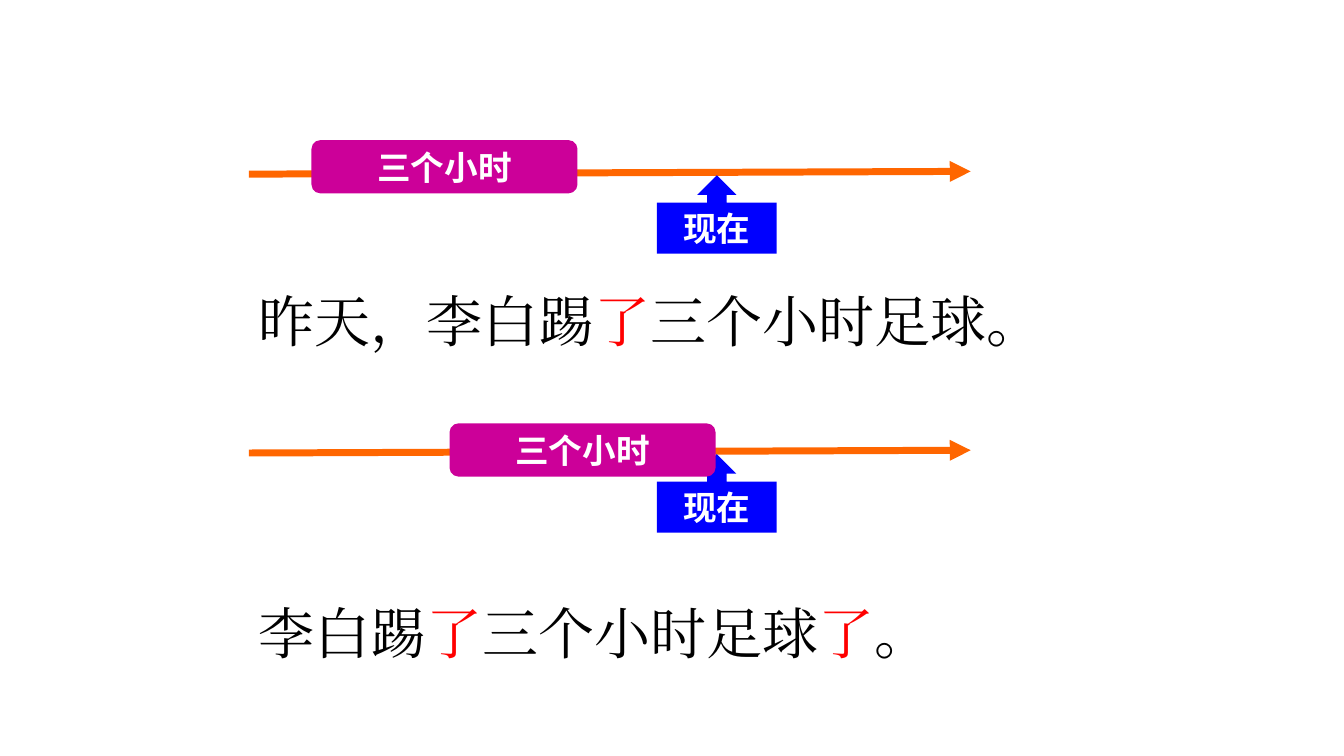
import pptx
import pptx.util
import pptx.dml.color
import pptx.enum.shapes
import pptx.enum.text
import pptx.oxml.ns
from lxml import etree

Pt = pptx.util.Pt
SHAPES = pptx.enum.shapes.MSO_SHAPE
COLOURS = {
    "text": "000000",
    "particle": "FF0000",
    "axis": "FF6600",
    "now": "0000FF",
    "duration": "CC0099",
    "label": "FFFFFF",
}
LABEL_FONT = "Noto Sans CJK SC"
SENTENCE_FONT = "Times New Roman"
PARTICLE = "了"


def rgb(name):
    """Return the named colour."""
    return pptx.dml.color.RGBColor.from_string(COLOURS[name])


def add_child(parent, tag, **attributes):
    """Append a drawing element with the given attributes."""
    return etree.SubElement(parent, pptx.oxml.ns.qn(tag), attributes)


def add_text(paragraph, text, size=24, font=LABEL_FONT, colour="label", bold=False):
    """Add a formatted run to a paragraph."""
    run = paragraph.add_run()
    run.text = text
    run.font.size = Pt(size)
    run.font.bold = bold
    run.font.color.rgb = rgb(colour)
    run.font.name = font
    add_child(run.font._element, "a:ea", typeface=font)


def add_label(slide, kind, box, text, colour):
    """Add a filled shape with a bold centred label."""
    shape = slide.shapes.add_shape(kind, *map(Pt, box))
    shape.shadow.inherit = False
    shape.fill.solid()
    shape.fill.fore_color.rgb = rgb(colour)
    shape.line.fill.background()
    frame = shape.text_frame
    frame.vertical_anchor = pptx.enum.text.MSO_ANCHOR.MIDDLE
    paragraph = frame.paragraphs[0]
    paragraph.alignment = pptx.enum.text.PP_ALIGN.CENTER
    add_text(paragraph, text, bold=True)


def add_timeline(slide, left, top, width, duration_left, duration_top):
    """Draw a time arrow with its present marker and its duration block."""
    axis = slide.shapes.add_connector(
        pptx.enum.shapes.MSO_CONNECTOR.STRAIGHT,
        Pt(left), Pt(top + 2), Pt(left + width), Pt(top))
    axis.line.width = Pt(5)
    axis.line.color.rgb = rgb("axis")
    add_child(axis.line._get_or_add_ln(), "a:tailEnd", type="triangle")
    add_child(axis._element.spPr, "a:effectLst")
    add_label(slide, SHAPES.UP_ARROW_CALLOUT,
              (left + 291.5, top + 2.8, 85.5, 56), "现在", "now")
    add_label(slide, SHAPES.ROUNDED_RECTANGLE,
              (left + duration_left, top + duration_top, 190, 38), "三个小时", "duration")


def add_sentence(slide, left, top, width, height, parts):
    """Write a sentence with its particles highlighted."""
    frame = slide.shapes.add_textbox(*map(Pt, (left, top, width, height))).text_frame
    frame.word_wrap = True
    paragraph = frame.paragraphs[0]
    paragraph.line_spacing = 2.0
    for part in parts:
        colour = "particle" if part == PARTICLE else "text"
        add_text(paragraph, part, size=40, font=SENTENCE_FONT, colour=colour)


def main():
    """Build and save the presentation."""
    presentation = pptx.Presentation()
    presentation.slide_width = Pt(960)
    presentation.slide_height = Pt(540)
    slide = presentation.slides.add_slide(presentation.slide_layouts[6])
    left = 177.8
    add_sentence(slide, left, 153.4, 684, 89,
                 ["昨天，李白踢", PARTICLE, "三个小时足球。"])
    add_sentence(slide, left, 375.8, 684, 104,
                 ["李白踢", PARTICLE, "三个小时足球", PARTICLE, "。"])
    add_timeline(slide, left, 122.4, 515.6, 44.7, -22.3)
    add_timeline(slide, left, 321.6, 515.6, 143.3, -19.2)
    presentation.save("out.pptx")


if __name__ == "__main__":
    main()
